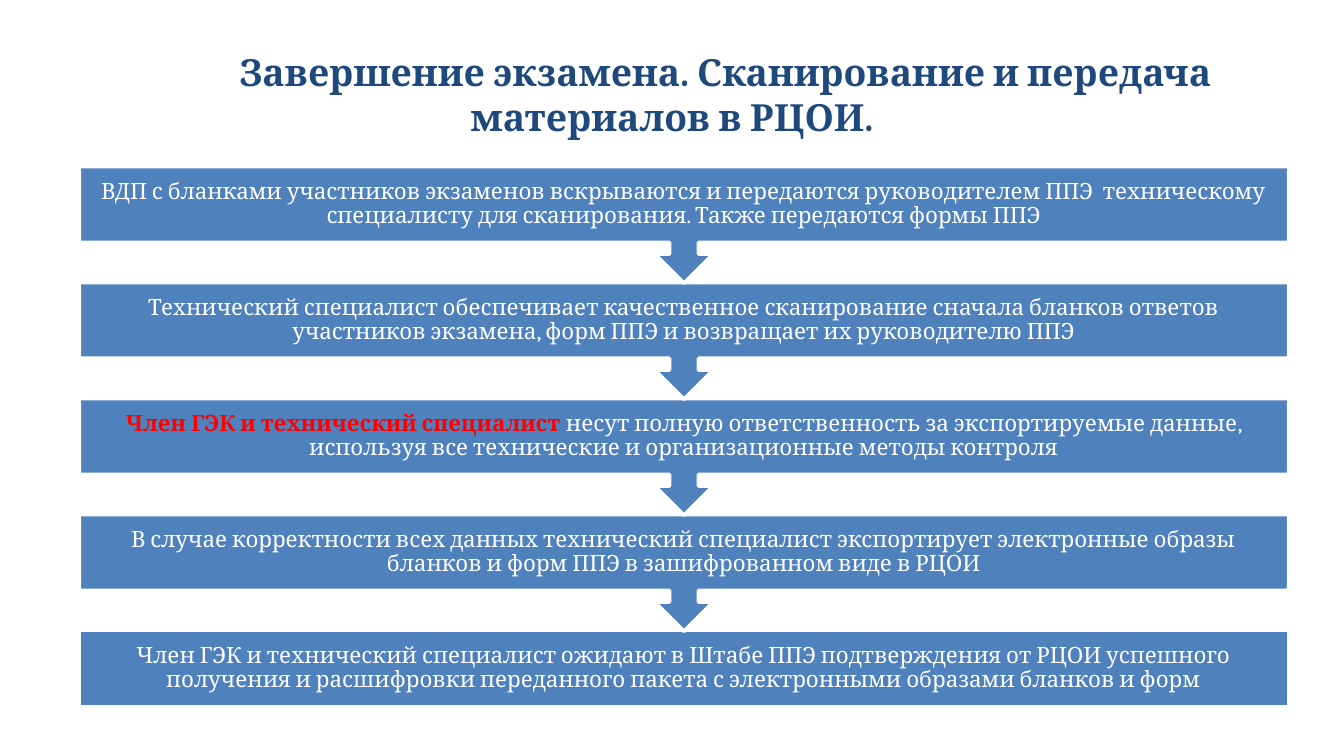
from dataclasses import dataclass

from pptx import Presentation
from pptx.dml.color import RGBColor
from pptx.enum.shapes import MSO_SHAPE
from pptx.enum.text import MSO_ANCHOR, PP_ALIGN
from pptx.util import Pt

CENTER = PP_ALIGN.CENTER
MIDDLE = MSO_ANCHOR.MIDDLE
RECTANGLE = MSO_SHAPE.RECTANGLE
CALLOUT = MSO_SHAPE.DOWN_ARROW_CALLOUT
TITLE_ONLY = 5


@dataclass(frozen=True)
class Theme:
    """Colours, font and type sizes of the deck."""

    font: str = "Cambria"
    title_size: int = 20
    step_size: int = 12
    title: RGBColor = RGBColor(0x1F, 0x49, 0x7D)
    fill: RGBColor = RGBColor(0x4F, 0x81, 0xBD)
    light: RGBColor = RGBColor(0xFF, 0xFF, 0xFF)
    accent: RGBColor = RGBColor(0xFF, 0x00, 0x00)


@dataclass(frozen=True)
class Box:
    """A region of the page in points."""

    left: float
    top: float
    width: float
    height: float


THEME = Theme()
TITLE = "Завершение экзамена. Сканирование и передача материалов в РЦОИ."
STEPS = [
    ("", "ВДП с бланками участников экзаменов вскрываются и передаются руководителем ППЭ  "
         "техническому специалисту для сканирования. Также передаются формы ППЭ"),
    ("", "Технический специалист обеспечивает качественное сканирование сначала бланков "
         "ответов участников экзамена, форм ППЭ и возвращает их руководителю ППЭ"),
    ("Член ГЭК и технический специалист ",
     "несут полную ответственность за экспортируемые данные, используя все технические "
     "и организационные методы контроля"),
    ("", "В случае корректности всех данных технический специалист экспортирует "
         "электронные образы бланков и форм ППЭ в зашифрованном виде в РЦОИ"),
    ("", "Член ГЭК и технический специалист ожидают в Штабе ППЭ подтверждения от РЦОИ "
         "успешного получения и расшифровки переданного пакета с электронными образами "
         "бланков и форм"),
]


def place(shape, box):
    """Move a shape to its box."""
    shape.left, shape.top = Pt(box.left), Pt(box.top)
    shape.width, shape.height = Pt(box.width), Pt(box.height)


def style(span, size, color, bold=False):
    """Format one run of text."""
    span.font.name = THEME.font
    span.font.size = Pt(size)
    span.font.bold = bold
    span.font.color.rgb = color


def add_title(page, box):
    """Fill the title placeholder, with its first line indented."""
    title = page.shapes.title
    place(title, box)
    frame = title.text_frame
    frame.text = TITLE
    frame.word_wrap = True
    frame.vertical_anchor = MIDDLE
    para = frame.paragraphs[0]
    para.alignment = CENTER
    para._p.get_or_add_pPr().set("indent", str(Pt(57)))
    style(para.runs[0], THEME.title_size, THEME.title, bold=True)


def add_step(page, kind, box, lead, text):
    """Draw one step with an optional highlighted lead."""
    step = page.shapes.add_shape(kind, 0, 0, 0, 0)
    place(step, box)
    step.shadow.inherit = False
    step.fill.solid()
    step.fill.fore_color.rgb = THEME.fill
    step.line.color.rgb = THEME.light
    step.line.width = Pt(2)
    frame = step.text_frame
    frame.word_wrap = True
    frame.vertical_anchor = MIDDLE
    frame.margin_left = frame.margin_right = Pt(6.5)
    frame.margin_top = frame.margin_bottom = Pt(6.5)
    para = frame.paragraphs[0]
    para.alignment = CENTER
    para.line_spacing = 0.9
    if lead:
        span = para.add_run()
        span.text = lead
        style(span, THEME.step_size, THEME.accent, bold=True)
    span = para.add_run()
    span.text = text
    style(span, THEME.step_size, THEME.light)


def add_flow(page, box):
    """Stack the steps at an equal pitch, from the last one up."""
    last = len(STEPS) - 1
    body = 40.7
    pitch = (box.height - body) / last
    for index in range(last, -1, -1):
        kind, height = (RECTANGLE, body) if index == last else (CALLOUT, pitch + 0.4)
        step_box = Box(box.left, box.top + index * pitch, box.width, height)
        add_step(page, kind, step_box, *STEPS[index])


def main():
    """Build the deck and save it."""
    deck = Presentation()
    deck.slide_width, deck.slide_height = Pt(720), Pt(405)
    page = deck.slides.add_slide(deck.slide_layouts[TITLE_ONLY])
    add_title(page, Box(36, 16.8, 648, 67.5))
    add_flow(page, Box(42.5, 89.2, 648, 289.3))
    deck.save("out.pptx")


if __name__ == "__main__":
    main()
